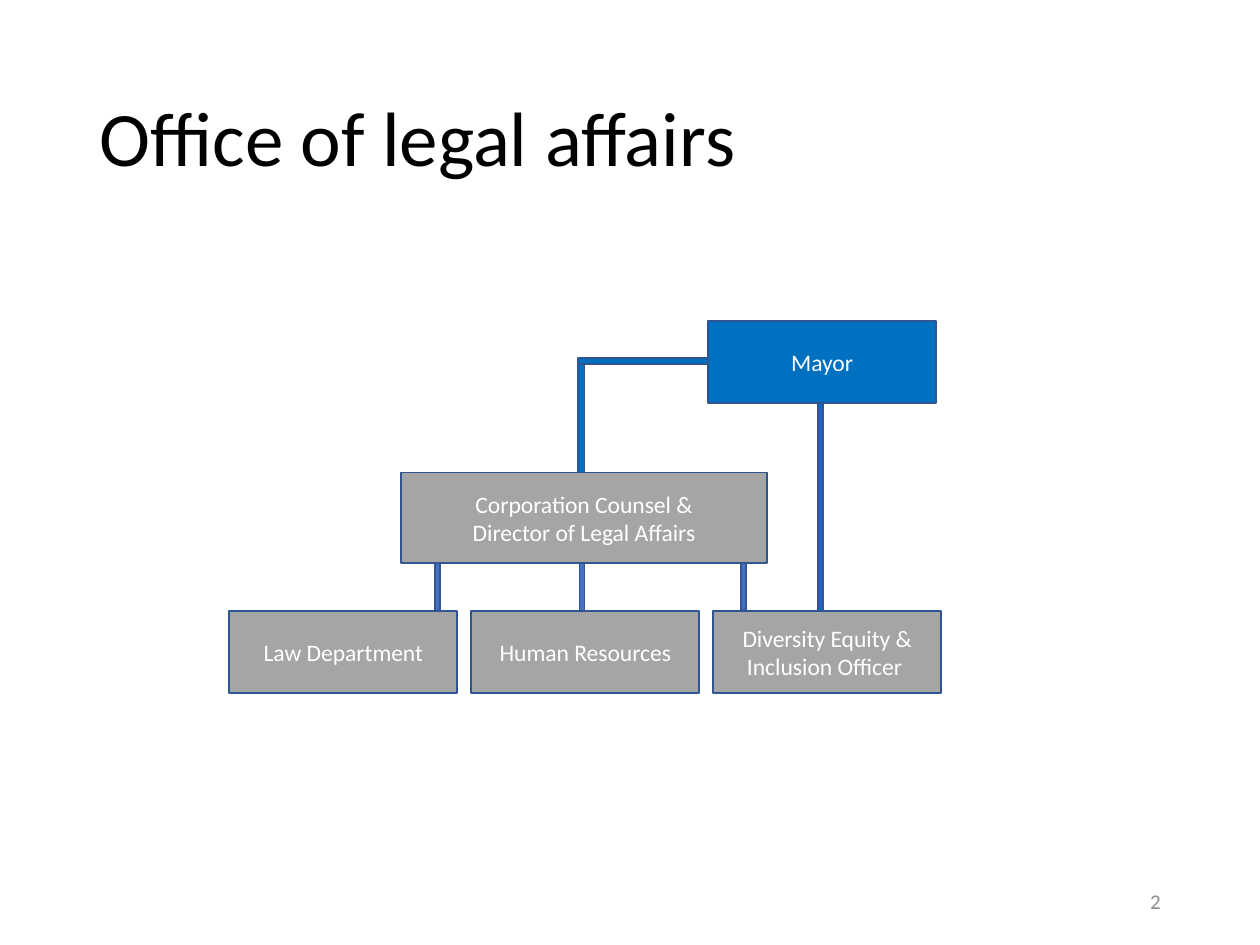
from dataclasses import dataclass

from pptx import Presentation
from pptx.dml.color import RGBColor
from pptx.enum.shapes import MSO_SHAPE
from pptx.enum.text import MSO_ANCHOR, PP_ALIGN
from pptx.util import Inches, Pt


@dataclass(frozen=True)
class Theme:
    font: str = "Calibri"
    title: float = 44
    label: float = 13.5
    number: float = 12
    black: str = "000000"
    white: str = "FFFFFF"
    muted: str = "8C8C8C"
    mayor: str = "0070C0"
    office: str = "A5A5A5"
    bar: str = "4472C4"
    edge: str = "325491"


@dataclass(frozen=True)
class Box:
    x: float
    y: float
    w: float
    h: float

    def emu(self):
        return [Inches(v) for v in (self.x, self.y, self.w, self.h)]

    def cell(self, col, row, cols, rows, grid):
        """Part of this box, counted on a grid of (columns, rows)."""
        cw, rh = self.w / grid[0], self.h / grid[1]
        return Box(self.x + col * cw, self.y + row * rh, cols * cw, rows * rh)


THEME = Theme()
SLIDE = Box(0, 0, 10, 7.5)
SLIDE_GRID = (200, 150)
CHART_GRID = (113, 59)


def write(sp, text, size, color, align=PP_ALIGN.LEFT, spacing=None, insets=(0.1, 0.05)):
    tf = sp.text_frame
    tf.word_wrap = True
    tf.vertical_anchor = MSO_ANCHOR.MIDDLE
    tf.margin_left = tf.margin_right = Inches(insets[0])
    tf.margin_top = tf.margin_bottom = Inches(insets[1])
    tf.text = text
    for p in tf.paragraphs:
        p.alignment = align
        p.line_spacing = spacing
        for r in p.runs:
            r.font.name, r.font.size = THEME.font, Pt(size)
            r.font.color.rgb = RGBColor.from_string(color)


def add_rect(s, box, fill):
    sp = s.shapes.add_shape(MSO_SHAPE.RECTANGLE, *box.emu())
    sp.shadow.inherit = False
    sp.fill.solid()
    sp.fill.fore_color.rgb = RGBColor.from_string(fill)
    sp.line.color.rgb = RGBColor.from_string(THEME.edge)
    sp.line.width = Pt(1)
    return sp


def add_title(s, box, text):
    sp = s.shapes.title
    sp.left, sp.top, sp.width, sp.height = box.emu()
    write(sp, text, THEME.title, THEME.black, spacing=0.9)


def add_number(s, box, text):
    sp = s.shapes.add_textbox(*box.emu())
    write(sp, text, THEME.number, THEME.muted, align=PP_ALIGN.RIGHT)


def add_org_chart(s, box):
    # Bars: column, row, columns, rows, fill
    bars = [
        (32.6, 38.4, 0.8, 7.6, THEME.bar),
        (55.6, 38.4, 0.8, 7.6, THEME.bar),
        (81.2, 38.2, 0.8, 7.6, THEME.bar),
        (93.4, 10.2, 0.8, 35.8, THEME.mayor),
        (55.4, 6.8, 1, 17.2, THEME.mayor),
        (55.4, 5.8, 20.6, 1, THEME.mayor),
    ]
    for *cell, fill in bars:
        add_rect(s, box.cell(*cell, CHART_GRID), fill)

    # Offices: text, column, row, columns, rows, fill
    width, height, gap = 36.2, 13, 2.2
    offices = [
        ("Mayor", 76, 0, width, height, THEME.mayor),
        ("Corporation Counsel &\nDirector of Legal Affairs", 27.2, 24, 58.2, 14.4, THEME.office),
    ]
    departments = ["Law Department", "Human Resources", "Diversity Equity & Inclusion Officer "]
    for i, name in enumerate(departments):
        offices.append((name, i * (width + gap), 46, width, height, THEME.office))
    for text, *cell, fill in offices:
        sp = add_rect(s, box.cell(*cell, CHART_GRID), fill)
        write(sp, text, THEME.label, THEME.white, align=PP_ALIGN.CENTER, insets=(0.07, 0.04))


def main():
    prs = Presentation()
    prs.slide_width, prs.slide_height = Inches(SLIDE.w), Inches(SLIDE.h)
    s = prs.slides.add_slide(prs.slide_layouts[5])
    add_title(s, SLIDE.cell(13.8, 8, 172.4, 29, SLIDE_GRID), "Office of legal affairs")
    add_org_chart(s, SLIDE.cell(36.4, 51, 113, 59, SLIDE_GRID))
    add_number(s, SLIDE.cell(141.2, 139, 45, 8, SLIDE_GRID), "2")
    prs.save("out.pptx")


if __name__ == "__main__":
    main()
